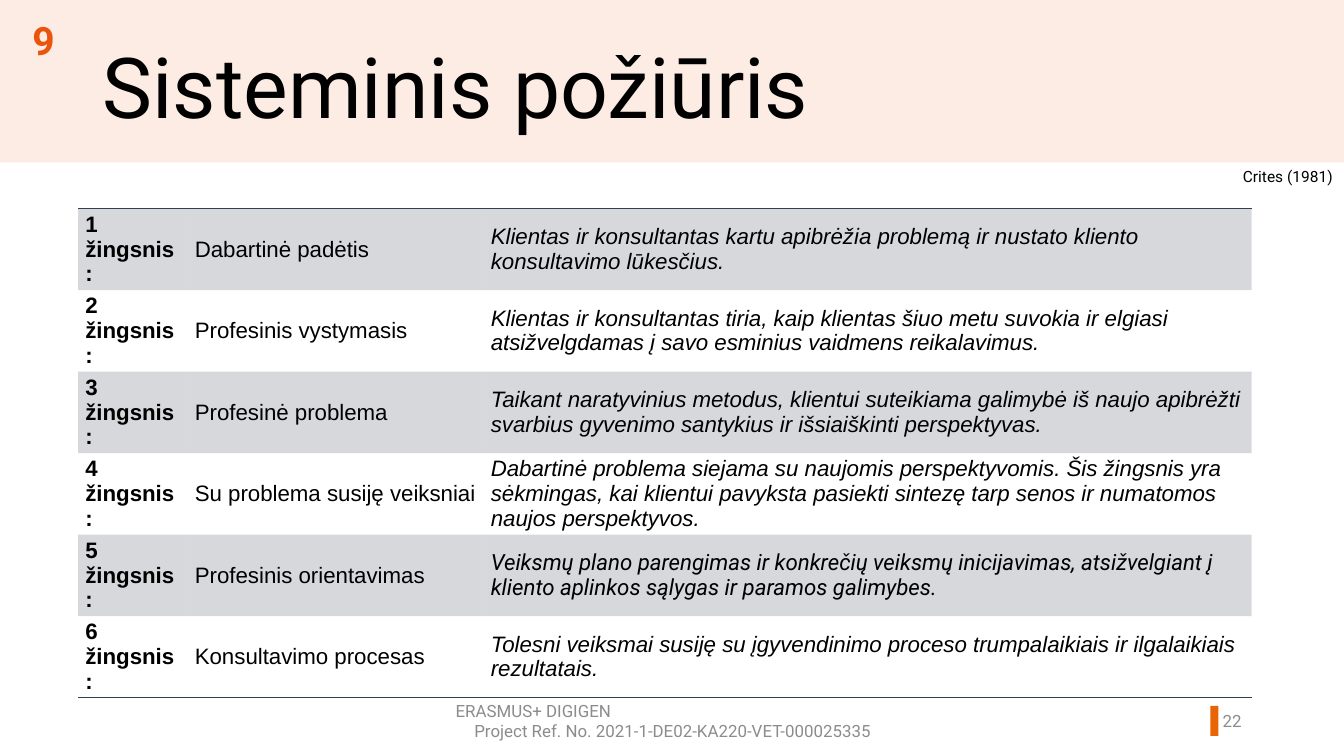
from dataclasses import dataclass

from lxml.etree import SubElement
from pptx import Presentation
from pptx.dml.color import RGBColor
from pptx.enum.shapes import MSO_SHAPE
from pptx.enum.text import MSO_ANCHOR, MSO_AUTO_SIZE, PP_ALIGN
from pptx.oxml import parse_xml
from pptx.oxml.ns import nsdecls, qn
from pptx.shapes.autoshape import Shape
from pptx.slide import Slide
from pptx.table import _Cell
from pptx.text.text import _Paragraph
from pptx.util import Cm, Pt

HUES = {"band": "FDECE3", "bar": "E86507", "badge": "E9550D",
        "ink": "000000", "grey": "8C8C8C", "navy": "333F50"}
PLAIN = "{2D5ABB26-0587-4C30-8999-92F81FD0307C}"


@dataclass
class Box:
    """A place on the slide in centimetres."""
    left: float
    top: float
    width: float
    height: float

    def spots(self) -> list[int]:
        """Give the four lengths."""
        return [Cm(n) for n in (self.left, self.top, self.width, self.height)]


@dataclass
class Label:
    """A text box with one alignment for each line."""
    box: Box
    lines: list[tuple[str, PP_ALIGN]]
    size: float
    hue: str
    bold: bool = False
    anchor: MSO_ANCHOR = MSO_ANCHOR.TOP


@dataclass
class Step:
    """One row of the table."""
    name: str
    text: str
    face: str = "Arial"


STEPS = [
    Step("Dabartinė padėtis",
         "Klientas ir konsultantas kartu apibrėžia problemą ir nustato kliento "
         "konsultavimo lūkesčius."),
    Step("Profesinis vystymasis",
         "Klientas ir konsultantas tiria, kaip klientas šiuo metu suvokia ir elgiasi "
         "atsižvelgdamas į savo esminius vaidmens reikalavimus."),
    Step("Profesinė problema",
         "Taikant naratyvinius metodus, klientui suteikiama galimybė iš naujo apibrėžti "
         "svarbius gyvenimo santykius ir išsiaiškinti perspektyvas."),
    Step("Su problema susiję veiksniai",
         "Dabartinė problema siejama su naujomis perspektyvomis. Šis žingsnis yra "
         "sėkmingas, kai klientui pavyksta pasiekti sintezę tarp senos ir numatomos "
         "naujos perspektyvos."),
    Step("Profesinis orientavimas",
         "Veiksmų plano parengimas ir konkrečių veiksmų inicijavimas, atsižvelgiant į "
         "kliento aplinkos sąlygas ir paramos galimybes.", "Roboto"),
    Step("Konsultavimo procesas",
         "Tolesni veiksmai susiję su įgyvendinimo proceso trumpalaikiais ir ilgalaikiais "
         "rezultatais."),
]

LABELS = [
    Label(Box(11.28, 17.73, 11.48, 1.02),
          [("ERASMUS+ DIGIGEN", PP_ALIGN.LEFT),
           ("Project Ref. No. 2021-1-DE02-KA220-VET-000025335", PP_ALIGN.CENTER)],
          12.1, "grey", anchor=MSO_ANCHOR.MIDDLE),
    Label(Box(30.02, 17.73, 1.65, 1.02), [("22", PP_ALIGN.RIGHT)],
          12.1, "grey", anchor=MSO_ANCHOR.MIDDLE),
    Label(Box(26.06, 4.11, 7.92, 0.74), [("Crites (1981)", PP_ALIGN.RIGHT)], 11.1, "ink"),
    Label(Box(0.23, 0.3, 1.75, 1.45), [("9", PP_ALIGN.CENTER)], 28, "badge", bold=True),
]


def tint(hue: str) -> RGBColor:
    """Look up a colour."""
    return RGBColor.from_string(HUES[hue])


def style(para: _Paragraph, size: float, hue: str, face: str = "Roboto",
          bold: bool = False, slant: bool = False) -> None:
    """Set the font of a paragraph."""
    font = para.font
    font.name, font.size = face, Pt(size)
    font.bold, font.italic = bold, slant
    font.color.rgb = tint(hue)


def add_block(slide: Slide, box: Box, hue: str) -> Shape:
    """Draw a plain rectangle."""
    block = slide.shapes.add_shape(MSO_SHAPE.RECTANGLE, *box.spots())
    block.shadow.inherit = False
    block.fill.solid()
    block.fill.fore_color.rgb = tint(hue)
    block.line.fill.background()
    return block


def add_label(slide: Slide, label: Label) -> None:
    """Draw a text box."""
    frame = slide.shapes.add_textbox(*label.box.spots()).text_frame
    frame.word_wrap = True
    frame.vertical_anchor = label.anchor
    frame.text = "\n".join(text for text, _ in label.lines)
    for para, (_, align) in zip(frame.paragraphs, label.lines):
        para.alignment = align
        style(para, label.size, label.hue, bold=label.bold)


def set_title(slide: Slide) -> None:
    """Place and format the title."""
    title = slide.shapes.title
    title.left, title.top, title.width, title.height = Box(2.34, 1.04, 25.35, 2.18).spots()
    frame = title.text_frame
    frame.text = "Sisteminis požiūris"
    frame.auto_size = MSO_AUTO_SIZE.NONE
    frame.vertical_anchor = MSO_ANCHOR.TOP
    para = frame.paragraphs[0]
    para.alignment = PP_ALIGN.LEFT
    para.line_spacing = 0.9
    style(para, 60.3, "ink")


def shade(cell: _Cell) -> None:
    """Fill a cell with pale navy."""
    cell.fill.solid()
    cell.fill.fore_color.rgb = tint("navy")
    for clr in cell.fill._xPr.iter(qn("a:srgbClr")):
        SubElement(clr, qn("a:alpha"), val="20000")


def rule(cell: _Cell, side: str) -> None:
    """Draw a navy border on one side of a cell."""
    line = parse_xml(
        f'<a:{side} {nsdecls("a")} w="{Pt(1)}"><a:solidFill>'
        f'<a:srgbClr val="{HUES["navy"]}"/></a:solidFill></a:{side}>')
    cell._tc.get_or_add_tcPr().insert(0, line)


def add_steps(slide: Slide) -> None:
    """Build the table of steps."""
    frame = slide.shapes.add_table(len(STEPS), 3, *Box(1.98, 5.28, 29.69, 11.4).spots())
    table = frame.table
    table.first_row = table.horz_banding = False
    for node in frame.element.iter(qn("a:tableStyleId")):
        node.text = PLAIN
    for col, width in zip(table.columns, (2.77, 7.49, 19.43)):
        col.width = Cm(width)
    for row, step in enumerate(STEPS):
        texts = (f"{row + 1} žingsnis:", step.name, step.text)
        for col, text in enumerate(texts):
            cell = table.cell(row, col)
            cell.text = text
            cell.vertical_anchor = MSO_ANCHOR.MIDDLE
            cell.margin_left = cell.margin_right = Cm(0.18)
            cell.margin_top = cell.margin_bottom = Cm(0.09)
            style(cell.text_frame.paragraphs[0], 16, "ink",
                  step.face if col == 2 else "Arial", bold=col == 0, slant=col == 2)
            if row % 2:
                cell.fill.background()
            else:
                shade(cell)
            if row == 0:
                rule(cell, "lnT")
            if row == len(STEPS) - 1:
                rule(cell, "lnB")


def main() -> None:
    """Build and save the slide."""
    deck = Presentation()
    deck.slide_width, deck.slide_height = Cm(34.01), Cm(19.13)
    slide = deck.slides.add_slide(deck.slide_layouts[5])
    band = add_block(slide, Box(0, 0, 34.01, 4.11), "band")
    slide.shapes.title.element.addprevious(band.element)
    add_block(slide, Box(30.63, 17.86, 0.2, 0.76), "bar")
    set_title(slide)
    add_steps(slide)
    for label in LABELS:
        add_label(slide, label)
    deck.save("out.pptx")


if __name__ == "__main__":
    main()
